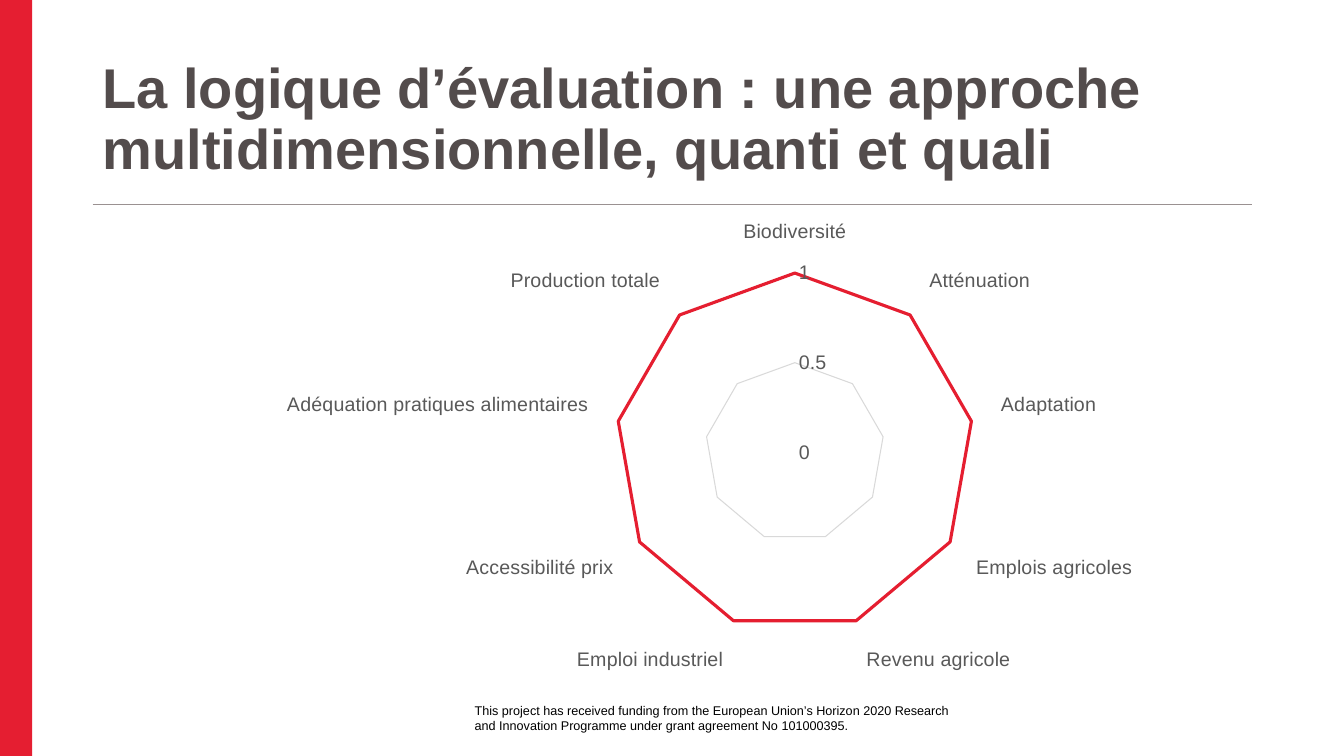
from lxml.etree import SubElement
from pptx import Presentation
from pptx.chart.data import CategoryChartData
from pptx.dml.color import RGBColor
from pptx.enum.chart import XL_CHART_TYPE, XL_MARKER_STYLE, XL_TICK_MARK
from pptx.enum.shapes import MSO_CONNECTOR, MSO_SHAPE
from pptx.enum.text import MSO_ANCHOR
from pptx.oxml.ns import qn
from pptx.util import Inches, Pt

COLORS = {
    "band": "E51E31",
    "series": "E51E30",
    "title": "534C4C",
    "rule": "9A9191",
    "labels": "595959",
    "grid": "D9D9D9",
    "funding": "000000",
}
FONT = "Arial"


def color(name):
    return RGBColor.from_string(COLORS[name])


def add_text(s, box, text, size, color_name, bold=False):
    tf = s.shapes.add_textbox(*map(Inches, box)).text_frame
    tf.word_wrap = True
    r = tf.paragraphs[0].add_run()
    r.text = text
    r.font.name = FONT
    r.font.size = Pt(size)
    r.font.bold = bold
    r.font.color.rgb = color(color_name)
    return tf


prs = Presentation()
prs.slide_width = Inches(13.33)
prs.slide_height = Inches(7.5)
s = prs.slides.add_slide(prs.slide_layouts[6])

# Red band on the left edge
band = s.shapes.add_shape(MSO_SHAPE.RECTANGLE, 0, 0, Inches(0.32), prs.slide_height)
band.shadow.inherit = False
band.fill.solid()
band.fill.fore_color.rgb = color("band")
band.line.fill.background()

# Funding statement
add_text(s, (4.61, 6.92, 4.96, 0.5),
         "This project has received funding from the European Union’s Horizon 2020 "
         "Research and Innovation Programme under grant agreement No 101000395.",
         9, "funding")

# Title and the rule below it
rule = s.shapes.add_connector(MSO_CONNECTOR.STRAIGHT, Inches(0.92), Inches(2.03),
                              Inches(12.42), Inches(2.03))
rule.line.color.rgb = color("rule")
rule.line.width = Pt(0.5)
SubElement(rule._element.spPr, qn("a:effectLst"))

title = add_text(s, (0.92, 0.4, 11.5, 1.45),
                 "La logique d’évaluation : une approche multidimensionnelle, "
                 "quanti et quali", 40, "title", bold=True)
title.vertical_anchor = MSO_ANCHOR.BOTTOM
title.paragraphs[0].line_spacing = 0.9

# Radar chart of the evaluation dimensions
dimensions = [
    "Biodiversité", "Atténuation", "Adaptation", "Emplois agricoles",
    "Revenu agricole", "Emploi industriel", "Accessibilité prix",
    "Adéquation pratiques alimentaires", "Production totale",
]
data = CategoryChartData()
data.categories = dimensions
data.add_series("Series 1", [1] * len(dimensions))
chart = s.shapes.add_chart(XL_CHART_TYPE.RADAR, Inches(2.01), Inches(2.1),
                           Inches(10.06), Inches(4.65), data).chart
chart.has_legend = False
chart.has_title = False
chart.font.name = FONT
chart.font.size = Pt(14)
chart.font.color.rgb = color("labels")

plot = chart.plots[0]
plot.vary_by_categories = False
series = plot.series[0]
series.format.line.color.rgb = color("series")
series.format.line.width = Pt(2.25)
series.marker.style = XL_MARKER_STYLE.NONE

for axis in (chart.category_axis, chart.value_axis):
    axis.major_tick_mark = XL_TICK_MARK.NONE
    axis.minor_tick_mark = XL_TICK_MARK.NONE
    axis.tick_labels.font.name = FONT
    axis.tick_labels.font.size = Pt(14)
    axis.tick_labels.font.color.rgb = color("labels")

chart.category_axis.has_major_gridlines = False
value_axis = chart.value_axis
value_axis.minimum_scale = 0
value_axis.maximum_scale = 1
value_axis.major_unit = 0.5
value_axis.tick_labels.number_format = "General"
value_axis.tick_labels.number_format_is_linked = False
value_axis.format.line.fill.background()
value_axis.has_major_gridlines = True
for line in (chart.category_axis.format.line, value_axis.major_gridlines.format.line):
    line.color.rgb = color("grid")
    line.width = Pt(0.75)

prs.save("out.pptx")
